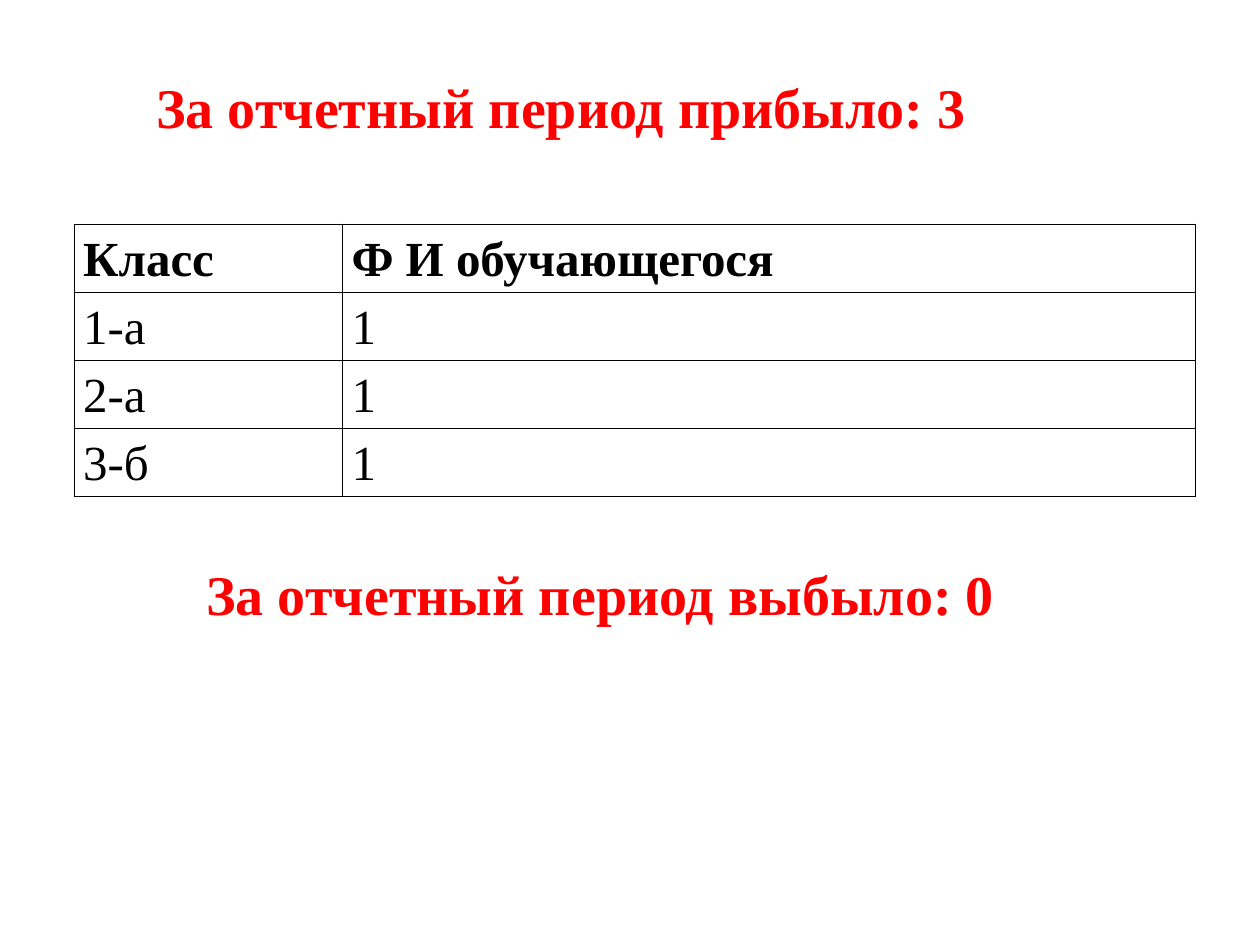
"""Build a slide on pupils who arrived and left in the reporting period."""
from lxml import etree
from pptx import Presentation
from pptx.dml.color import RGBColor
from pptx.enum.text import MSO_ANCHOR, MSO_AUTO_SIZE, PP_ALIGN
from pptx.oxml.ns import qn
from pptx.util import Inches, Pt

LEFT = PP_ALIGN.LEFT
MIDDLE = MSO_ANCHOR.MIDDLE
GROW = MSO_AUTO_SIZE.SHAPE_TO_FIT_TEXT
RED = RGBColor(255, 0, 0)
BLACK = RGBColor(0, 0, 0)
FACE = "Times New Roman"

ARRIVED = "За отчетный период прибыло: 3"
LEAVERS = "За отчетный период выбыло: 0"
ROWS = [
    ("Класс", "Ф И обучающегося"),
    ("1-а", "1"),
    ("2-а", "1"),
    ("3-б", "1"),
]
COLS = (2.13, 6.77)
HIGH = 0.54
HEAD = {"name": FACE, "size": Pt(32), "bold": True}
BODY = {"name": FACE, "size": Pt(28)}
FRAME = {"vertical_anchor": MIDDLE, "auto_size": GROW}
INSETS = {
    "margin_left": Inches(0.07),
    "margin_right": Inches(0.07),
    "margin_top": 0,
    "margin_bottom": 0,
}


def put(item, values):
    for name, value in values.items():
        setattr(item, name, value)


def style(para, look, color):
    font = para.runs[0].font
    put(font, look)
    font.color.rgb = color


def heading(shape, text, box, wrap):
    put(shape, dict(zip(("left", "top", "width", "height"), map(Inches, box))))
    frame = shape.text_frame
    frame.text = text
    put(frame, {**FRAME, "word_wrap": wrap})
    para = frame.paragraphs[0]
    put(para, {"alignment": LEFT, "line_spacing": 1.0})
    style(para, HEAD, RED)


def border(cell):
    props = cell._tc.get_or_add_tcPr()
    for spot, side in enumerate(("lnL", "lnR", "lnT", "lnB")):
        line = etree.Element(qn(f"a:{side}"), w=str(Pt(1)))
        fill = etree.SubElement(line, qn("a:solidFill"))
        etree.SubElement(fill, qn("a:srgbClr"), val=str(BLACK))
        props.insert(spot, line)


def roster(slide):
    box = (0.59, 1.78, sum(COLS), HIGH * len(ROWS))
    frame = slide.shapes.add_table(len(ROWS), len(COLS), *map(Inches, box))
    table = frame.table
    table.horz_banding = False
    for col, width in zip(table.columns, COLS):
        col.width = Inches(width)
    for r, row in enumerate(ROWS):
        for c, text in enumerate(row):
            cell = table.cell(r, c)
            cell.text = text
            put(cell, INSETS)
            cell.fill.background()
            border(cell)
            para = cell.text_frame.paragraphs[0]
            para.line_spacing = 1.15
            style(para, {**BODY, "bold": r == 0}, BLACK)


def main():
    deck = Presentation()
    put(deck, {"slide_width": Inches(10), "slide_height": Inches(7.5)})
    slide = deck.slides.add_slide(deck.slide_layouts[5])
    heading(slide.shapes.title, ARRIVED, (1.14, 0.52, 6.69, 0.64), False)
    roster(slide)
    note = slide.shapes.add_textbox(0, 0, 0, 0)
    heading(note, LEAVERS, (1.54, 4.39, 8.46, 0.64), True)
    deck.save("out.pptx")


if __name__ == "__main__":
    main()
